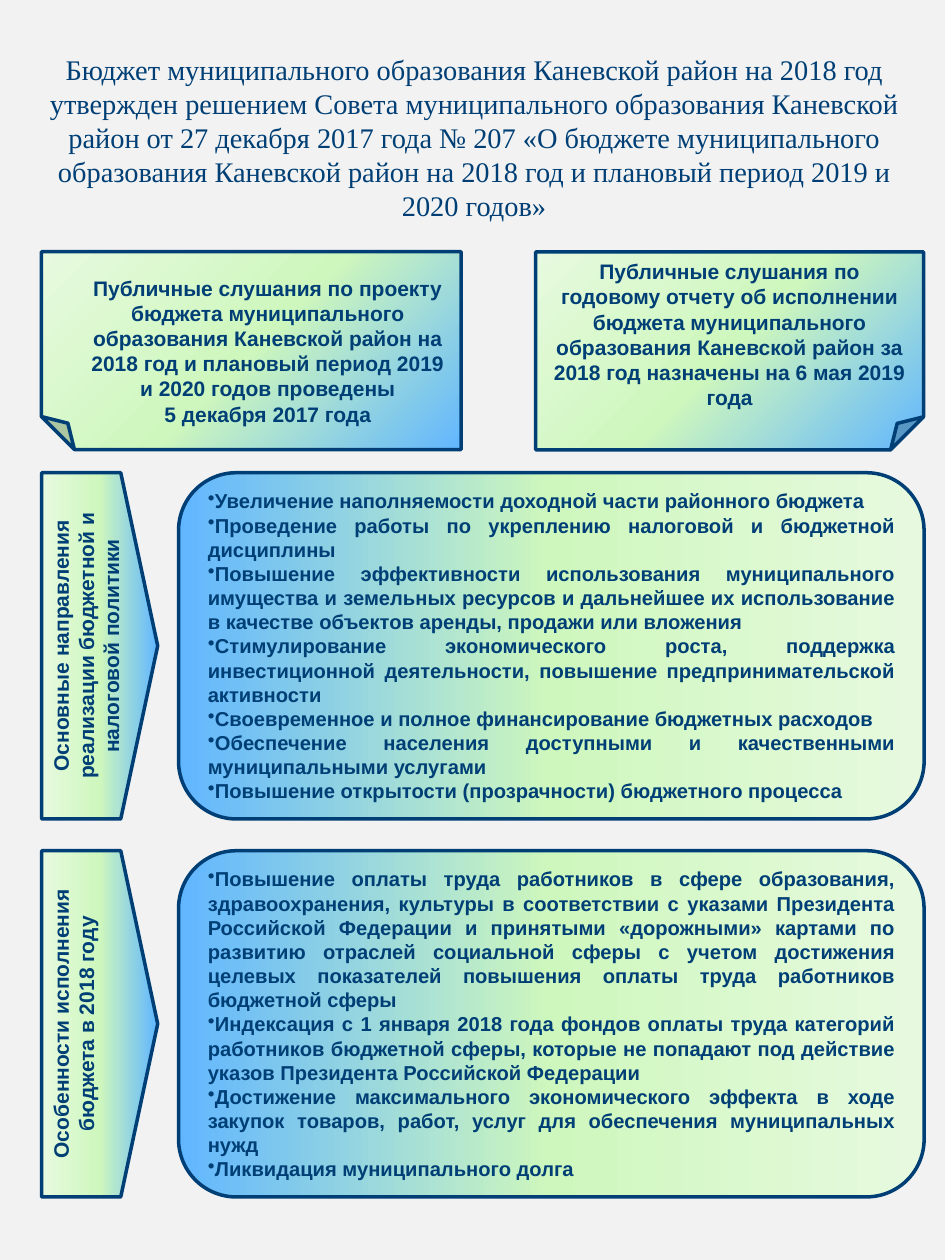
from lxml import etree
from pptx import Presentation
from pptx.dml.color import RGBColor
from pptx.enum.shapes import MSO_SHAPE as Shape
from pptx.enum.text import MSO_ANCHOR as Anchor, PP_ALIGN as Align
from pptx.oxml import parse_xml
from pptx.oxml.ns import nsdecls, qn
from pptx.util import Cm, Pt

COLORS = {"background": "F2F2F2", "ink": "003F75"}
GRADIENT = [(0, "61B6FF"), (50, "CEF7BD"), (100, "E7FADF")]
CORNER = '<a:path path="circle"><a:fillToRect l="100000" t="100000"/></a:path>'
FROM_LEFT = '<a:lin ang="0" scaled="1"/>'
FROM_RIGHT = '<a:lin ang="10800000" scaled="1"/>'

TITLE = (
    "Бюджет муниципального образования Каневской район на 2018 год утвержден решением "
    "Совета муниципального образования Каневской район от 27 декабря 2017 года № 207 "
    "«О бюджете муниципального образования Каневской район на 2018 год и плановый период "
    "2019 и 2020 годов»"
)
HEARINGS = [
    (10.8, 5.08, 7.82, 3.99, 0, [
        "Публичные слушания по годовому отчету об исполнении бюджета муниципального "
        "образования Каневской район за 2018 год назначены на 6 мая 2019 года",
    ]),
    (3.07, 2.84, 3.99, 8.46, 90, [
        "Публичные слушания по проекту бюджета муниципального образования Каневской район "
        "на 2018 год и плановый период 2019 и 2020 годов проведены",
        "5 декабря 2017 года",
    ]),
]
SECTIONS = [
    ("Основные направления реализации бюджетной и налоговой политики", [
        "Увеличение наполняемости доходной части районного бюджета",
        "Проведение работы по укреплению налоговой и бюджетной дисциплины",
        "Повышение эффективности использования муниципального имущества и земельных ресурсов "
        "и дальнейшее их использование в качестве объектов аренды, продажи или вложения",
        "Стимулирование экономического роста, поддержка инвестиционной деятельности, "
        "повышение предпринимательской активности",
        "Своевременное и полное финансирование бюджетных расходов",
        "Обеспечение населения доступными и качественными муниципальными услугами",
        "Повышение открытости (прозрачности) бюджетного процесса",
    ]),
    ("Особенности исполнения бюджета в 2018 году", [
        "Повышение оплаты труда работников в сфере образования, здравоохранения, культуры "
        "в соответствии с указами Президента Российской Федерации и принятыми «дорожными» "
        "картами по развитию отраслей социальной сферы с учетом достижения целевых "
        "показателей повышения оплаты труда работников бюджетной сферы",
        "Индексация с 1 января 2018 года фондов оплаты труда категорий работников бюджетной "
        "сферы, которые не попадают под действие указов Президента Российской Федерации",
        "Достижение максимального экономического эффекта в ходе закупок товаров, работ, "
        "услуг для обеспечения муниципальных нужд",
        "Ликвидация муниципального долга",
    ]),
]
SECTION_TOP, SECTION_STEP, SECTION_HEIGHT = 9.53, 7.62, 6.98


def write_text(shape, lines, size=12, font="Arial", bold=True, align=Align.CENTER,
               anchor=Anchor.MIDDLE, bullet=None, vertical=False):
    frame = shape.text_frame
    frame.word_wrap = True
    frame.vertical_anchor = anchor
    if vertical:
        frame._txBody.bodyPr.set("vert", "vert270")
    for index, line in enumerate(lines):
        paragraph = frame.paragraphs[0] if index == 0 else frame.add_paragraph()
        paragraph.alignment = align
        run = paragraph.add_run()
        run.text = line
        run.font.size, run.font.name, run.font.bold = Pt(size), font, bold
        run.font.color.rgb = RGBColor.from_string(COLORS["ink"])
        if bullet:
            properties = paragraph._p.get_or_add_pPr()
            etree.SubElement(properties, qn("a:buChar")).set("char", bullet)


def add_panel(slide, kind, left, top, width, height, direction, rotation=0):
    shape = slide.shapes.add_shape(kind, Cm(left), Cm(top), Cm(width), Cm(height))
    shape.rotation = rotation
    shape.shadow.inherit = False
    shape.line.color.rgb = RGBColor.from_string(COLORS["ink"])
    shape.line.width = Pt(2)
    stops = "".join(
        f'<a:gs pos="{position * 1000}"><a:srgbClr val="{color}"/></a:gs>'
        for position, color in GRADIENT
    )
    gradient = parse_xml(
        f'<a:gradFill {nsdecls("a")} rotWithShape="0"><a:gsLst>{stops}</a:gsLst>'
        f'{direction}</a:gradFill>'
    )
    shape._element.spPr.find(qn("a:prstGeom")).addnext(gradient)
    return shape


def main():
    """Build the budget overview slide."""
    presentation = Presentation()
    presentation.slide_width, presentation.slide_height = Cm(19.05), Cm(25.4)
    slide = presentation.slides.add_slide(presentation.slide_layouts[5])
    slide.background.fill.solid()
    slide.background.fill.fore_color.rgb = RGBColor.from_string(COLORS["background"])

    title = slide.shapes.title
    title.left, title.top, title.width, title.height = Cm(0.69), Cm(1.07), Cm(17.73), Cm(3.38)
    write_text(title, [TITLE], size=16.2, font="Times New Roman", bold=False)

    for left, top, width, height, rotation, lines in HEARINGS:
        note = add_panel(slide, Shape.FOLDED_CORNER, left, top, width, height, CORNER, rotation)
        write_text(note, lines, vertical=rotation != 0)

    for index, (heading, points) in enumerate(SECTIONS):
        top = SECTION_TOP + index * SECTION_STEP
        arrow = add_panel(slide, Shape.PENTAGON, 0.84, top, 2.34, SECTION_HEIGHT, FROM_RIGHT)
        arrow.adjustments[0] = 0.318
        write_text(arrow, [heading], anchor=Anchor.TOP, vertical=True)
        panel = add_panel(slide, Shape.ROUNDED_RECTANGLE, 3.6, top, 15.03, SECTION_HEIGHT, FROM_LEFT)
        write_text(panel, points, size=11.5, align=Align.JUSTIFY, bullet="•")

    presentation.save("out.pptx")


if __name__ == "__main__":
    main()
